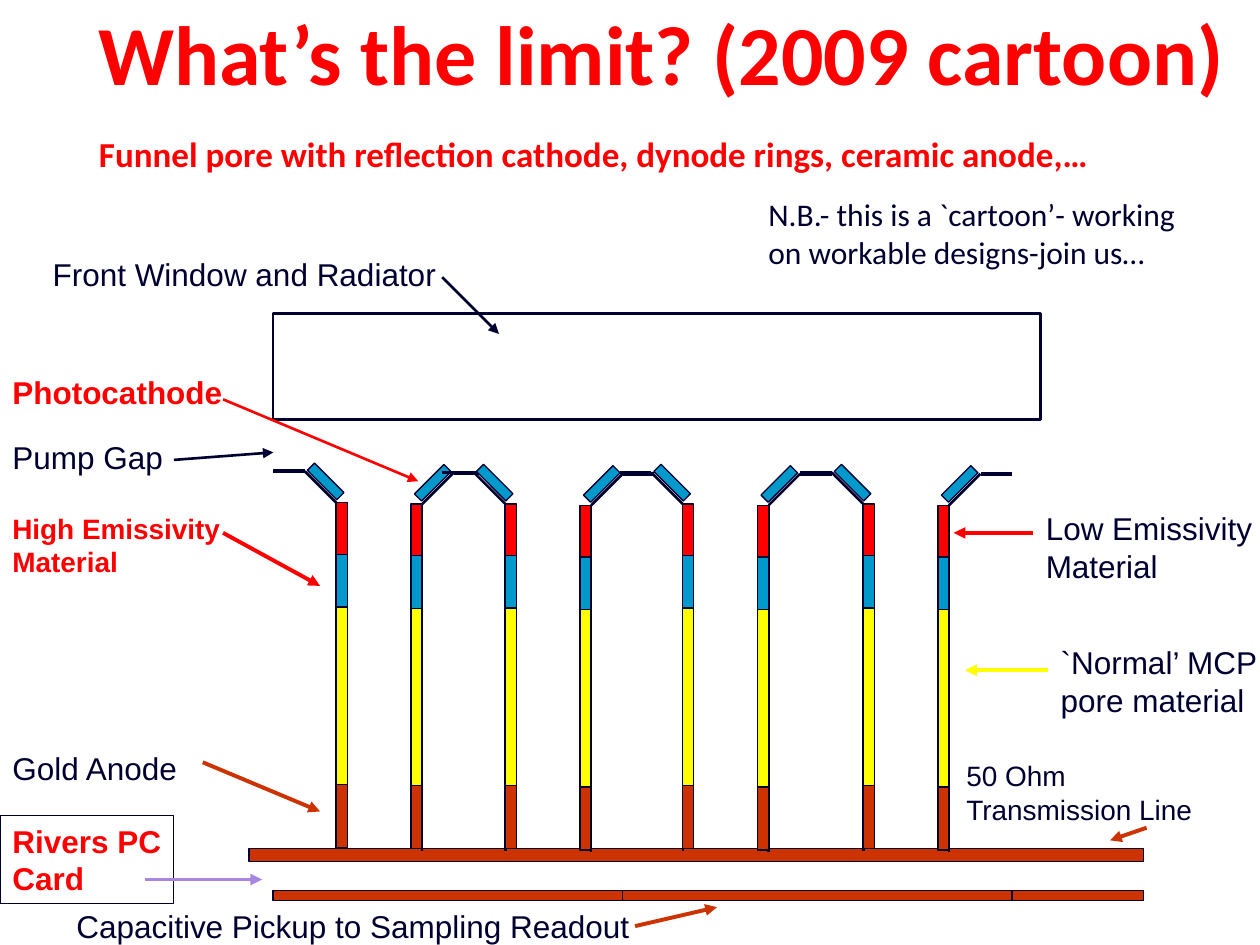
"""Builds the slide with the 2009 funnel pore cartoon."""
from typing import NamedTuple

from lxml import etree
from pptx import Presentation
from pptx.dml.color import RGBColor
from pptx.enum.shapes import MSO_CONNECTOR, MSO_SHAPE
from pptx.enum.text import MSO_ANCHOR, MSO_AUTO_SIZE, PP_ALIGN
from pptx.oxml.ns import qn
from pptx.util import Pt

STRAIGHT = MSO_CONNECTOR.STRAIGHT
RECTANGLE = MSO_SHAPE.RECTANGLE
MIDDLE = MSO_ANCHOR.MIDDLE
GROW, FIXED = MSO_AUTO_SIZE.SHAPE_TO_FIT_TEXT, MSO_AUTO_SIZE.NONE
LEFT, CENTER = PP_ALIGN.LEFT, PP_ALIGN.CENTER

NAVY, RED, BLUE, YELLOW = "000030", "FF0000", "0099CC", "FFFF00"
COPPER, VIOLET, WHITE = "CC3300", "A886E0", "FFFFFF"

WALL_WIDTH = 6.3
PORE_WIDTH = 49
RIM = 18
WALL_HEIGHT = 198


class Label(NamedTuple):
    text: str
    left: float
    top: float
    width: float
    height: float
    size: float = 18
    color: str = NAVY
    bold: bool = False
    font: str = "Arial"
    wrap: bool = True
    outlined: bool = False


class Line(NamedTuple):
    x1: float
    y1: float
    x2: float
    y2: float
    color: str = NAVY
    width: float = 1.5


class Bar(NamedTuple):
    left: float
    top: float
    width: float
    height: float
    fill: str
    line_width: float = 0.75
    rotation: float = 0


class Segment(NamedTuple):
    offset: float
    height: float
    fill: str


class Pore(NamedTuple):
    left: float
    top: float


SEGMENTS = [
    Segment(18, 29.7, RED),
    Segment(47.6, 36, BLUE),
    Segment(77.5, 101.5, YELLOW),
    Segment(179, 36, COPPER),
]
PORES = [Pore(192.2, 269.3), Pore(288.8, 270), Pore(390.2, 270), Pore(493.3, 270)]

WINDOW = Bar(156, 179.2, 438.5, 60.7, WHITE, 1.5)
ANODE = Bar(142.3, 484.7, 511, 7.6, COPPER)
PICKUP_EDGES = [156, 355.7, 578.3, 653.3]

TITLE = Label("What’s the limit? (2009 cartoon)", 18, 0, 720, 72, 48, RED, True, "Calibri")
LABELS = [
    Label("Front Window and Radiator", 23, 142, 238, 29, wrap=False),
    Label("Photocathode", 0, 209.8, 142.5, 29, color=RED, bold=True),
    Label("Pump Gap", 0, 246.5, 127.5, 29),
    Label("High Emissivity Material", 0, 288.5, 165.5, 46, 16, RED, True),
    Label("Low Emissivity Material", 590.5, 287.5, 138, 50.5),
    Label("`Normal’ MCP pore material", 599, 363.8, 127.5, 50.5),
    Label("Gold Anode", 0, 424.3, 142.5, 29),
    Label("50 Ohm Transmission Line", 545.2, 430, 155.5, 46, 16),
    Label("Rivers PC Card", 0, 466, 99.2, 50.5, color=RED, bold=True, outlined=True),
    Label("Capacitive Pickup to Sampling Readout", 36.5, 515, 406, 29),
    Label("N.B.- this is a `cartoon’- working on workable designs-join us…",
          432, 108, 264, 50.5, font="Calibri"),
    Label("Funnel pore with reflection cathode, dynode rings, ceramic anode,…",
          49.5, 72, 595.5, 31.5, 20, RED, True, "Calibri"),
]
ARROWS = [
    Line(252.7, 158.4, 285.1, 190.8),
    Line(127.5, 228.2, 239, 275),
    Line(99.4, 262.8, 156.2, 258.5),
    Line(127.5, 304.5, 182.9, 334.8, RED, 2.25),
    Line(590.4, 304.5, 545, 304.5, RED, 2.25),
    Line(599, 383, 551.5, 383, YELLOW, 2.25),
    Line(115.9, 435.6, 182.9, 463.7, COPPER, 2.25),
    Line(362.9, 529.2, 409.7, 518.4, COPPER, 2.25),
    Line(655.2, 473, 634.3, 480.2, COPPER, 2.25),
    Line(82.8, 502.6, 149.8, 502.6, VIOLET, 2.25),
]
ARROWS[1] = ARROWS[1]._replace(color=RED)


def rgb(value: str) -> RGBColor:
    """Turn a hex string into a colour."""
    return RGBColor.from_string(value)


def draw_bar(page, bar: Bar) -> None:
    """Draw a filled rectangle with a navy outline."""
    shape = page.shapes.add_shape(
        RECTANGLE, Pt(bar.left), Pt(bar.top), Pt(bar.width), Pt(bar.height))
    shape.shadow.inherit = False
    shape.rotation = bar.rotation
    shape.fill.solid()
    shape.fill.fore_color.rgb = rgb(bar.fill)
    shape.line.color.rgb = rgb(NAVY)
    shape.line.width = Pt(bar.line_width)


def draw_line(page, line: Line, arrow: bool = False) -> None:
    """Draw a straight line, with an arrowhead at its end if asked."""
    connector = page.shapes.add_connector(
        STRAIGHT, Pt(line.x1), Pt(line.y1), Pt(line.x2), Pt(line.y2))
    connector.line.color.rgb = rgb(line.color)
    connector.line.width = Pt(line.width)
    if arrow:
        outline = connector.line._get_or_add_ln()
        etree.SubElement(outline, qn("a:tailEnd"), type="triangle")
    etree.SubElement(connector._element.spPr, qn("a:effectLst"))


def draw_label(page, label: Label, align=LEFT, auto_size=GROW):
    """Draw a one-run text box and return it."""
    box = page.shapes.add_textbox(
        Pt(label.left), Pt(label.top), Pt(label.width), Pt(label.height))
    if label.outlined:
        box.line.color.rgb = rgb(NAVY)
        box.line.width = Pt(0.75)
    box.text_frame.word_wrap = label.wrap
    box.text_frame.auto_size = auto_size
    para = box.text_frame.paragraphs[0]
    para.alignment = align
    span = para.add_run()
    span.text = label.text
    span.font.name = label.font
    span.font.size = Pt(label.size)
    span.font.bold = label.bold
    span.font.color.rgb = rgb(label.color)
    return box


def draw_wall(page, x: float, top: float, side: int) -> None:
    """Draw one pore wall; side is 1 for a left wall and -1 for a right one."""
    lip = x - side * RIM
    draw_line(page, Line(lip - side * RIM, top, lip, top, width=2.25))
    draw_line(page, Line(x, top + RIM, x, top + RIM + WALL_HEIGHT))
    draw_line(page, Line(lip, top, x, top + RIM))
    draw_bar(page, Bar(x - side * 6.1 - 11.9, top + 2.9, 23.8, 5.8, BLUE,
                       rotation=45 * side % 360))
    left = x if side > 0 else x - WALL_WIDTH
    for segment in SEGMENTS:
        draw_bar(page, Bar(left, top + segment.offset, WALL_WIDTH,
                           segment.height, segment.fill))


def main() -> None:
    """Build and save the deck."""
    deck = Presentation()
    deck.slide_width, deck.slide_height = Pt(720), Pt(540)
    page = deck.slides.add_slide(deck.slide_layouts[6])

    title = draw_label(page, TITLE, CENTER, FIXED)
    title.text_frame.vertical_anchor = MIDDLE
    title.text_frame.paragraphs[0].line_spacing = 0.75

    draw_bar(page, WINDOW)
    draw_bar(page, ANODE)
    for pore in PORES:
        draw_wall(page, pore.left, pore.top, 1)
        draw_wall(page, pore.left + PORE_WIDTH, pore.top + 0.75, -1)
    for start, end in zip(PICKUP_EDGES, PICKUP_EDGES[1:]):
        draw_bar(page, Bar(start, 509, end - start, 5.8, COPPER))
    for label in LABELS:
        draw_label(page, label)
    for arrow in ARROWS:
        draw_line(page, arrow, arrow=True)
    deck.save("out.pptx")


if __name__ == "__main__":
    main()
